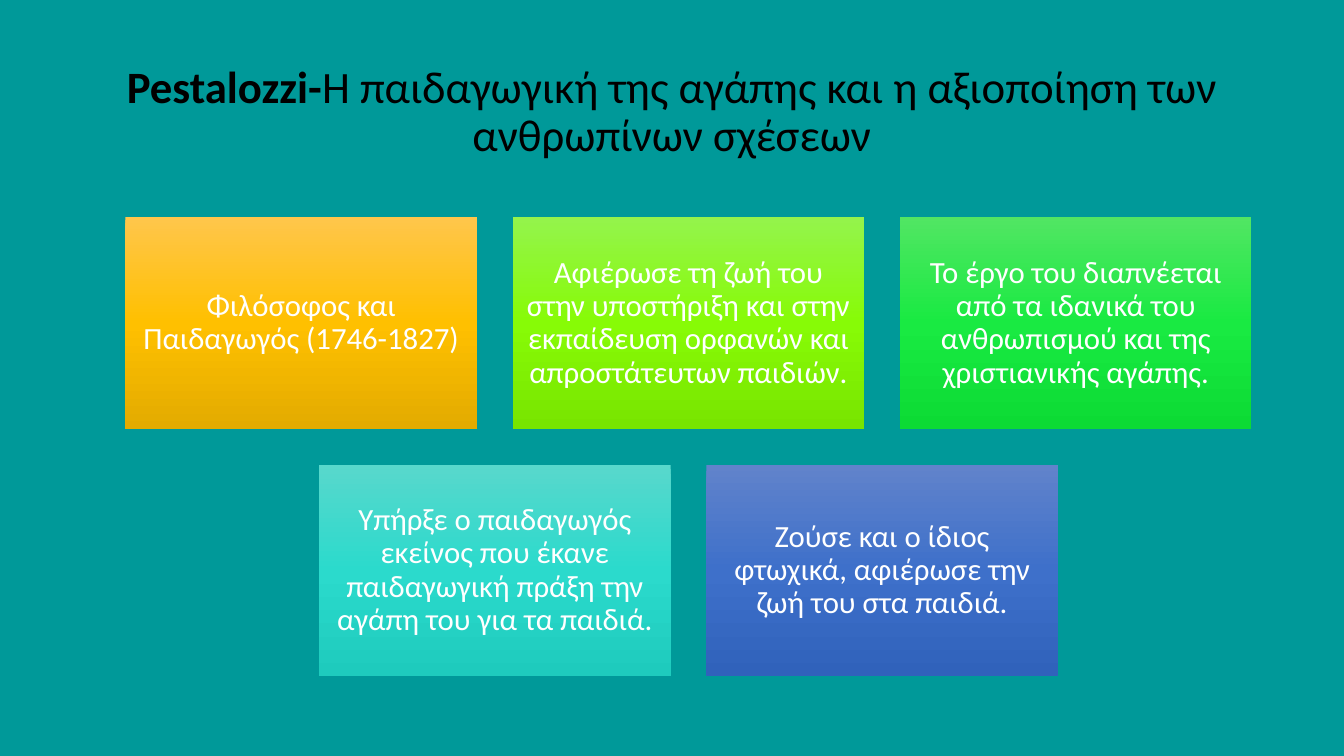
from copy import deepcopy

from pptx import Presentation
from pptx import util as u
from pptx.dml.color import RGBColor
from pptx.enum import shapes, text

COLORS = {
    "background": "009999",
    "title": "000000",
    "card_text": "FFFFFF",
    "amber": ("FFC64B", "FFC000", "E3AB00"),
    "lime": ("94F44C", "87FB06", "78E500"),
    "green": ("51E663", "19EA42", "0CDB34"),
    "turquoise": ("58D8CC", "2BDACC", "1ECBBD"),
    "blue": ("6183CB", "3E70CA", "3062BB"),
}

CARD_ROWS = [
    [
        ("amber", "Φιλόσοφος και Παιδαγωγός (1746-1827)"),
        ("lime", "Αφιέρωσε τη ζωή του στην υποστήριξη και στην εκπαίδευση "
                 "ορφανών και απροστάτευτων παιδιών."),
        ("green", "Το έργο του διαπνέεται από τα ιδανικά του ανθρωπισμού "
                  "και της χριστιανικής αγάπης."),
    ],
    [
        ("turquoise", "Υπήρξε ο παιδαγωγός εκείνος που έκανε παιδαγωγική "
                      "πράξη την αγάπη του για τα παιδιά."),
        ("blue", "Ζούσε και ο ίδιος φτωχικά, αφιέρωσε την ζωή του στα παιδιά."),
    ],
]

CARD_W, CARD_H, GAP = 8.86, 5.33, 0.9
CARDS_CENTER, CARDS_TOP = 17.35, 5.48


class SlideBuilder:
    """Hold the text style and the current slide, and add its elements."""

    def __init__(self, slide, font="Calibri"):
        self.slide = slide
        self.font = font

    def background(self, color):
        fill = self.slide.background.fill
        fill.solid()
        fill.fore_color.rgb = RGBColor.from_string(COLORS[color])

    def format_paragraph(self, p, size, color):
        p.alignment = text.PP_ALIGN.CENTER
        p.line_spacing = 0.9
        for r in p.runs:
            r.font.name = self.font
            r.font.size = u.Pt(size)
            r.font.color.rgb = RGBColor.from_string(COLORS[color])

    def title(self, name, subject):
        sp = self.slide.shapes.title
        sp.left, sp.top = u.Cm(2.33), u.Cm(1.01)
        sp.width, sp.height = u.Cm(29.21), u.Cm(3.68)
        tf = sp.text_frame
        tf.vertical_anchor = text.MSO_ANCHOR.MIDDLE
        p = tf.paragraphs[0]
        for content, bold in ((name, True), (subject, False)):
            r = p.add_run()
            r.text = content
            r.font.bold = bold
        self.format_paragraph(p, 32, "title")

    def gradient(self, sp, colors):
        fill = sp.fill
        fill.gradient()
        fill.gradient_angle = 270
        first = sp.element.xpath(".//a:gs")[0]
        first.addnext(deepcopy(first))
        for stop, position, color in zip(fill.gradient_stops, (0, 0.5, 1), colors):
            stop.position = position
            stop.color.rgb = RGBColor.from_string(color)

    def card(self, left, top, color, content):
        sp = self.slide.shapes.add_shape(
            shapes.MSO_SHAPE.RECTANGLE,
            u.Cm(left), u.Cm(top), u.Cm(CARD_W), u.Cm(CARD_H))
        sp.shadow.inherit = False
        sp.line.fill.background()
        self.gradient(sp, COLORS[color])
        tf = sp.text_frame
        tf.word_wrap = True
        tf.vertical_anchor = text.MSO_ANCHOR.MIDDLE
        tf.margin_left = tf.margin_right = u.Cm(0.23)
        tf.margin_top = tf.margin_bottom = u.Cm(0.23)
        tf.text = content
        self.format_paragraph(tf.paragraphs[0], 22, "card_text")

    def card_row(self, top, cards):
        width = len(cards) * (CARD_W + GAP) - GAP
        for i, (color, content) in enumerate(cards):
            left = CARDS_CENTER - width / 2 + i * (CARD_W + GAP)
            self.card(left, top, color, content)


def main():
    prs = Presentation()
    prs.slide_width, prs.slide_height = u.Cm(33.87), u.Cm(19.05)
    builder = SlideBuilder(prs.slides.add_slide(prs.slide_layouts[5]))
    builder.background("background")
    builder.title("Pestalozzi-",
                  "Η παιδαγωγική της αγάπης και η αξιοποίηση των "
                  "ανθρωπίνων σχέσεων")
    for i, cards in enumerate(CARD_ROWS):
        builder.card_row(CARDS_TOP + i * (CARD_H + GAP), cards)
    prs.save("out.pptx")


if __name__ == "__main__":
    main()
